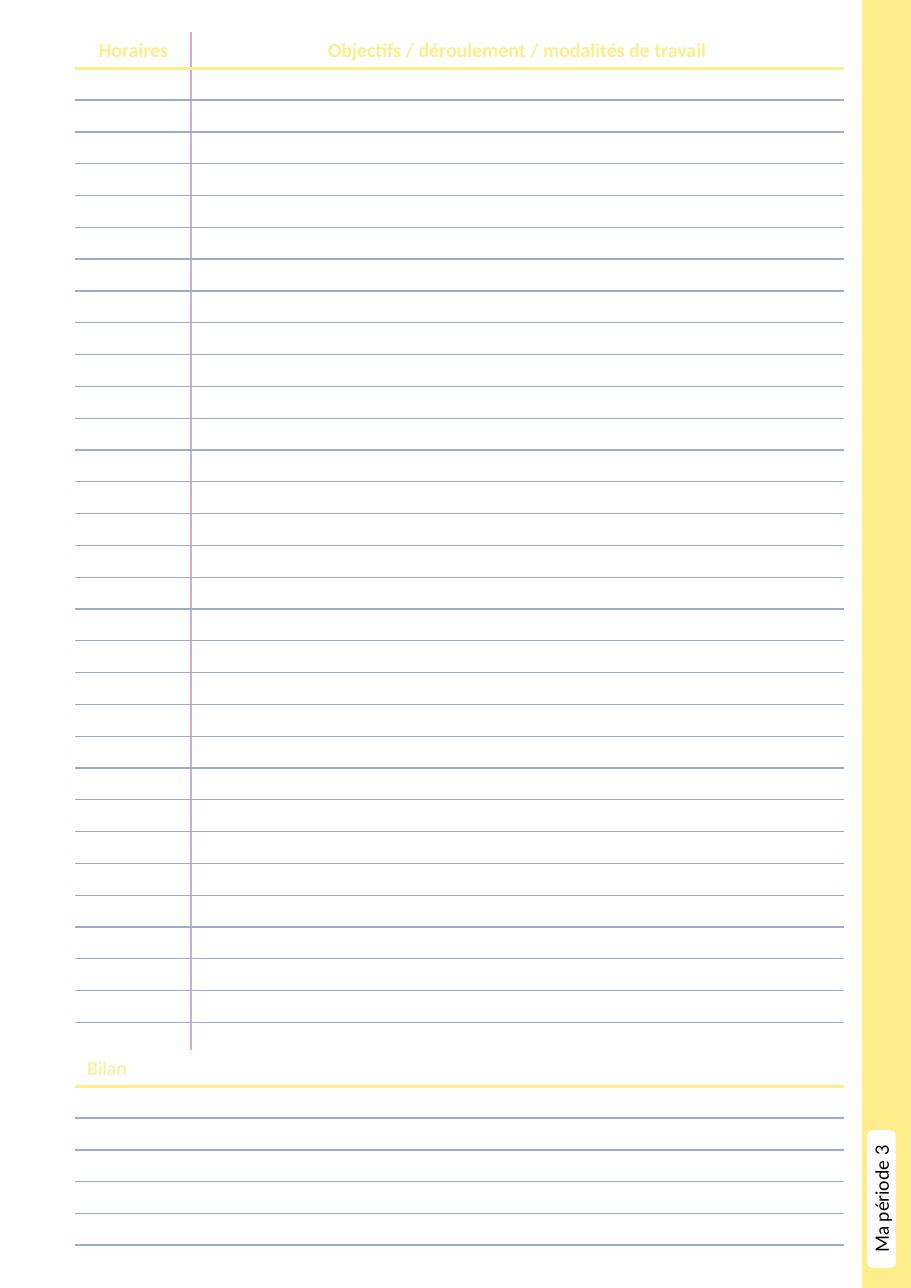
"""Build a yellow daily planner page with a ruled timetable and a ruled review area."""
import lxml.etree
import pptx
import pptx.dml.color
import pptx.enum.shapes
import pptx.enum.text
import pptx.oxml.ns
import pptx.util

SCALE = 914400 / 110.2
GOLD, WHITE, PINK = "FEED8A", "FFFFFF", "DCA9CC"
HEAD = 35


def px(size):
    return pptx.util.Emu(round(size * SCALE))


def paint(target, color):
    if hasattr(target, "solid"):
        target.solid()
        target = target.fore_color
    target.rgb = pptx.dml.color.RGBColor.from_string(color)


qn = pptx.oxml.ns.qn
deck = pptx.Presentation()
deck.slide_width, deck.slide_height = px(911), px(1288)
page = deck.slides.add_slide(deck.slide_layouts[6])

kinds = pptx.enum.shapes.MSO_SHAPE
bars = []
for kind, left, top, width, height, color in [
    (kinds.RECTANGLE, 863, 0, 48, 1288, GOLD),
    (kinds.ROUNDED_RECTANGLE, 868, 1131, 27, 136, WHITE),
]:
    bar = page.shapes.add_shape(kind, px(left), px(top), px(width), px(height))
    bar.shadow.inherit = False
    paint(bar.fill, color)
    paint(bar.line.fill, color)
    bar.line.width = pptx.util.Pt(1)
    bars.append(bar)

frame = bars[1].text_frame
frame.text = "Ma période 3"
frame.margin_left = frame.margin_right = frame.margin_top = frame.margin_bottom = 0
frame.vertical_anchor = pptx.enum.text.MSO_ANCHOR.MIDDLE
frame._txBody.bodyPr.set("vert", "vert270")
frame.paragraphs[0].alignment = pptx.enum.text.PP_ALIGN.CENTER
font = frame.paragraphs[0].runs[0].font
font.name, font.size = "Lato", pptx.util.Pt(12)
paint(font.color, "000000")

center = pptx.enum.text.PP_ALIGN.CENTER
start = pptx.enum.text.PP_ALIGN.LEFT
titles = ["Horaires", "Objectifs / déroulement / modalités de travail"]
for top, body, count, cols, heads, bold, align, mid, rule in [
    (33, 987, 31, [115, 652], titles, True, center, PINK, "9AADCD"),
    (1051, 159, 5, [383, 384], ["Bilan", ""], False, start, WHITE, "9BADCD"),
]:
    grid = page.shapes.add_table(
        count + 1, 2, px(76), px(top), px(sum(cols)), px(HEAD + body)
    ).table
    grid.first_row = grid.horz_banding = False
    for col, width in zip(grid.columns, cols):
        col.width = px(width)
    for row, line in enumerate(grid.rows):
        line.height = px(body / count) if row else px(HEAD)
        for col, cell in enumerate(line.cells):
            over = [WHITE, GOLD, rule][min(row, 2)]
            under = rule if row else GOLD
            sides = [("L", mid if col else WHITE), ("R", WHITE if col else mid),
                     ("T", over), ("B", under)]
            props = cell._tc.get_or_add_tcPr()
            for side, color in sides:
                weight = pptx.util.Pt(2.25 if color == GOLD else 1)
                edge = lxml.etree.SubElement(props, qn("a:ln" + side), w=str(weight))
                fill = lxml.etree.SubElement(edge, qn("a:solidFill"))
                lxml.etree.SubElement(fill, qn("a:srgbClr"), val=color)
            paint(cell.fill, WHITE)
            para = cell.text_frame.paragraphs[0]
            if row or not heads[col]:
                lxml.etree.SubElement(para._p, qn("a:endParaRPr"), sz="1000")
                continue
            para.text = heads[col]
            para.alignment = align
            font = para.runs[0].font
            font.name, font.size, font.bold = "Calibri", pptx.util.Pt(13), bold
            paint(font.color, GOLD)
        if row and mid == WHITE:
            grid.cell(row, 0).merge(grid.cell(row, 1))

deck.save("out.pptx")
